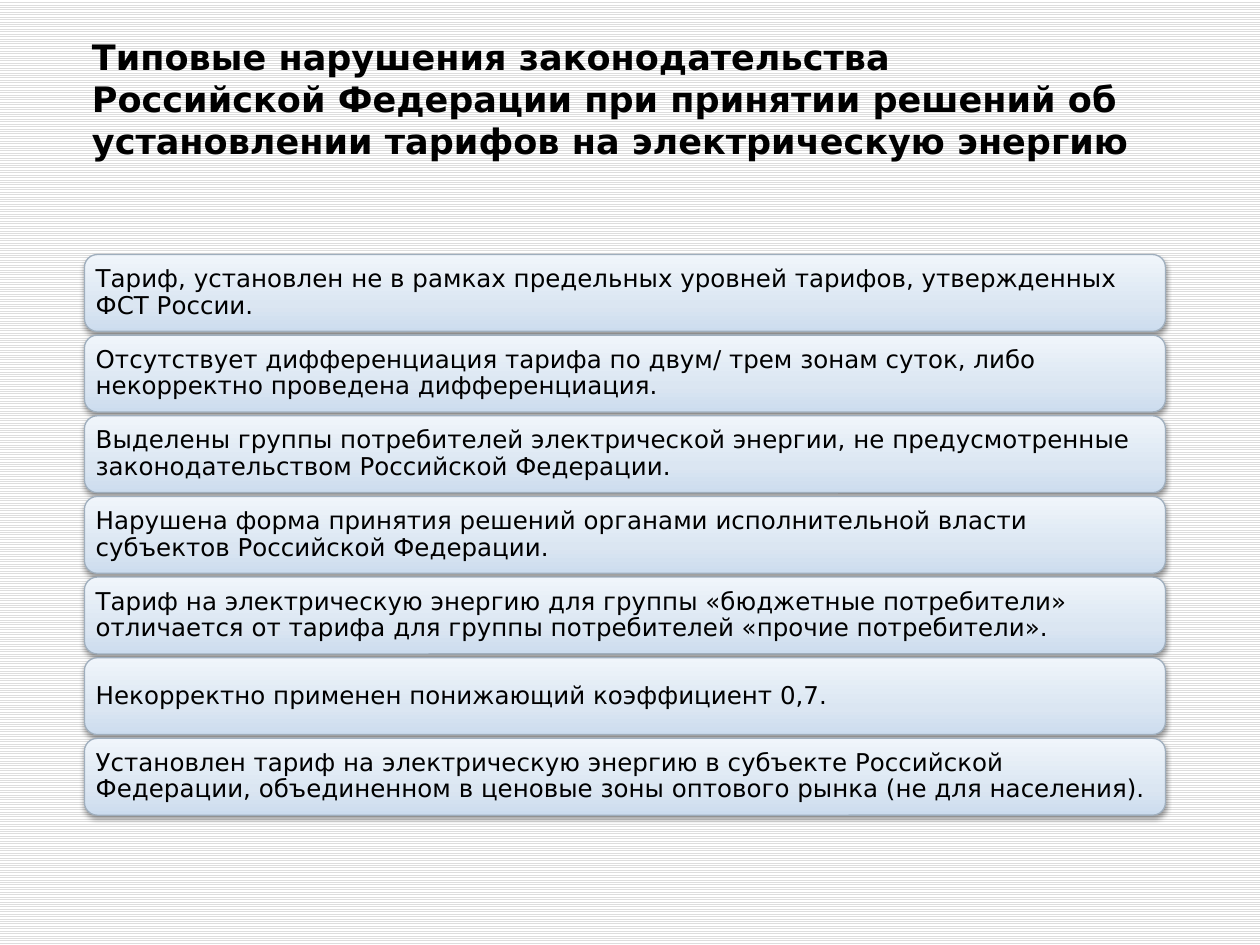
from lxml import etree
from pptx import Presentation
from pptx.dml.color import RGBColor
from pptx.enum import dml, shapes, text
from pptx.oxml.ns import qn
from pptx.util import Inches, Pt

TITLE = ("Типовые нарушения законодательства \vРоссийской Федерации при принятии "
         "решений об установлении тарифов на электрическую энергию")
VIOLATIONS = [
    "Тариф, установлен не в рамках предельных уровней тарифов, утвержденных ФСТ России.",
    "Отсутствует дифференциация тарифа по двум/ трем зонам суток, либо некорректно "
    "проведена дифференциация.",
    "Выделены группы потребителей электрической энергии, не предусмотренные "
    "законодательством Российской Федерации.",
    "Нарушена форма принятия решений органами исполнительной власти субъектов "
    "Российской Федерации.",
    "Тариф на электрическую энергию для группы «бюджетные потребители» отличается "
    "от тарифа для группы потребителей «прочие потребители».",
    "Некорректно применен понижающий коэффициент 0,7.",
    "Установлен тариф на электрическую энергию в субъекте Российской Федерации, "
    "объединенном в ценовые зоны оптового рынка (не для населения).",
]
COLORS = {"text": "000000", "line": "9FAEBD", "shadow": "000000",
          "stripe": "DDDDDD", "paper": "FFFFFF",
          "low": "CCDCEE", "middle": "DBE6F2", "high": "F0F5FB"}
GRADIENT = [(0, "low"), (35, "middle"), (100, "high")]
FONT = "DejaVu Sans"
LEFT, TOP, WIDTH, HEIGHT, PITCH = 0.67, 2.02, 8.58, 0.61, 0.64


def color(name):
    return RGBColor.from_string(COLORS[name])


def write(shape, content, size, bold, anchor, margins, spacing):
    frame = shape.text_frame
    frame.text = content
    sides = ("left", "top", "right", "bottom")
    frame_format = {f"margin_{side}": Inches(m) for side, m in zip(sides, margins)}
    frame_format |= {"word_wrap": True, "vertical_anchor": anchor,
                     "auto_size": text.MSO_AUTO_SIZE.NONE}
    for name, value in frame_format.items():
        setattr(frame, name, value)
    para = frame.paragraphs[0]
    para.alignment = text.PP_ALIGN.LEFT
    para.line_spacing = spacing
    for span in para.runs:
        for name, value in {"name": FONT, "size": Pt(size), "bold": bold}.items():
            setattr(span.font, name, value)
        span.font.color.rgb = color("text")


def add_color(parent, name):
    return etree.SubElement(parent, qn("a:srgbClr"), val=COLORS[name])


def fill_gradient(shape):
    shape.fill.gradient()
    shape.fill.gradient_angle = 90
    stops = shape._element.spPr.find(".//" + qn("a:gsLst"))
    for stop in list(stops):
        stops.remove(stop)
    for position, name in GRADIENT:
        add_color(etree.SubElement(stops, qn("a:gs"), pos=str(position * 1000)), name)


def cast_shadow(shape):
    shape.shadow.inherit = False
    effects = shape._element.spPr.find(qn("a:effectLst"))
    shadow = etree.SubElement(effects, qn("a:outerShdw"), blurRad=str(Pt(3.1)),
                              dist=str(Pt(1.6)), dir="5400000", rotWithShape="0")
    etree.SubElement(add_color(shadow, "shadow"), qn("a:alpha"), val="38000")


def add_violation(page, row, content):
    box = page.shapes.add_shape(
        shapes.MSO_SHAPE.ROUNDED_RECTANGLE, Inches(LEFT), Inches(TOP + row * PITCH),
        Inches(WIDTH), Inches(HEIGHT))
    fill_gradient(box)
    box.line.color.rgb = color("line")
    box.line.width = Pt(0.75)
    cast_shadow(box)
    write(box, content, 14, False, text.MSO_ANCHOR.MIDDLE, [0.06] * 4, 0.9)


def main():
    deck = Presentation()
    deck.slide_width, deck.slide_height = Inches(10), Inches(7.5)
    page = deck.slides.add_slide(deck.slide_layouts[5])
    backdrop = page.background.fill
    backdrop.patterned()
    backdrop.pattern = dml.MSO_PATTERN.LIGHT_HORIZONTAL
    backdrop.fore_color.rgb = color("stripe")
    backdrop.back_color.rgb = color("paper")

    title = page.shapes.title
    title.left, title.top = Inches(0.63), Inches(0.33)
    title.width, title.height = Inches(8.75), Inches(1.33)
    write(title, TITLE, 20, True, text.MSO_ANCHOR.BOTTOM, [0.1, 0.05, 0.1, 0.38], 1.0)

    for row, content in enumerate(VIOLATIONS):
        add_violation(page, row, content)
    deck.save("out.pptx")


if __name__ == "__main__":
    main()
